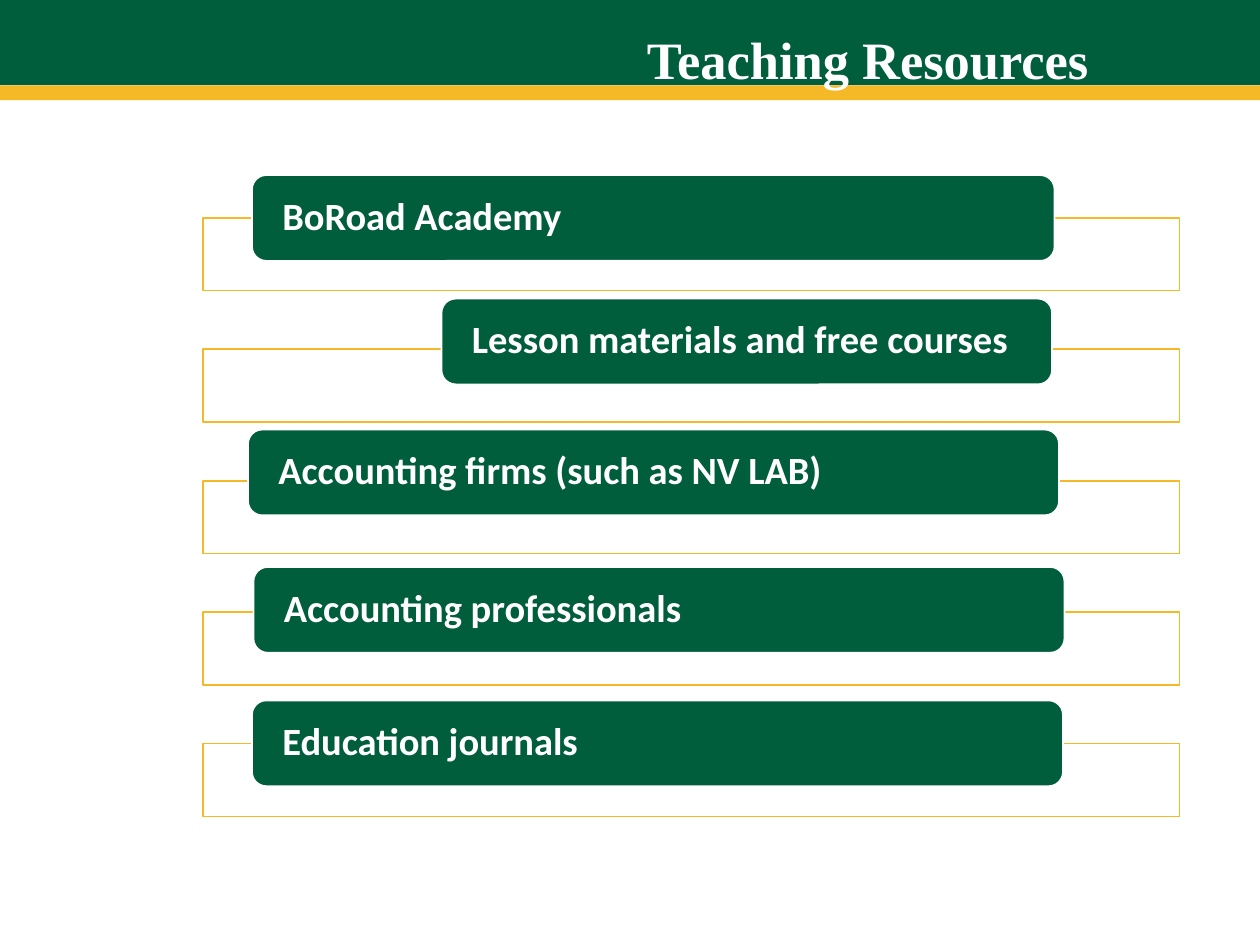
from pptx import Presentation
from pptx.dml.color import RGBColor
from pptx.enum.shapes import MSO_SHAPE
from pptx.enum.text import MSO_ANCHOR, PP_ALIGN
from pptx.util import Cm, Pt

RECT = MSO_SHAPE.RECTANGLE
ROUND = MSO_SHAPE.ROUNDED_RECTANGLE
MIDDLE = MSO_ANCHOR.MIDDLE
LEFT, RIGHT = PP_ALIGN.LEFT, PP_ALIGN.RIGHT

GREEN = RGBColor(0x00, 0x5E, 0x3C)
GOLD = RGBColor(0xF5, 0xB8, 0x27)
WHITE = RGBColor(0xFF, 0xFF, 0xFF)

# Label, left, top and width of each pill, in cm
ITEMS = [
    ("BoRoad Academy", 5.08, 3.53, 16.18),
    ("Lesson materials and free courses", 8.9, 6.02, 12.31),
    ("Accounting firms (such as NV LAB)", 5, 8.66, 16.35),
    ("Accounting professionals", 5.11, 11.43, 16.35),
    ("Education journals", 5.08, 14.12, 16.35),
]
FRAME_TOP, PITCH = 4.39, 2.65

prs = Presentation()
prs.slide_width, prs.slide_height = Cm(25.4), Cm(19.05)
slide = prs.slides.add_slide(prs.slide_layouts[6])


def add_box(kind, left, top, width, height, fill, line=None):
    """Add a filled shape, measured in cm, with a 1 pt outline if line is given."""
    box = slide.shapes.add_shape(kind, Cm(left), Cm(top), Cm(width), Cm(height))
    box.shadow.inherit = False
    box.fill.solid()
    box.fill.fore_color.rgb = fill
    if line is None:
        box.line.fill.background()
    else:
        box.line.color.rgb = line
        box.line.width = Pt(1)
    return box


def add_text(frame, text, name, size, align):
    frame.word_wrap = True
    para = frame.paragraphs[0]
    para.alignment = align
    run = para.add_run()
    run.text = text
    run.font.name = name
    run.font.size = Pt(size)
    run.font.bold = True
    run.font.color.rgb = WHITE
    return para


# Header bands and title
add_box(RECT, 0, 0, 25.4, 1.72, GREEN)
add_box(RECT, 0, 1.72, 25.4, 0.3, GOLD)
title = slide.shapes.add_textbox(Cm(6.1), Cm(0.43), Cm(16.1), Cm(1.54))
add_text(title.text_frame, "Teaching Resources", "Times New Roman", 30, RIGHT)

# Gold frames, each with a green pill over its top edge
for row, (label, left, top, width) in enumerate(ITEMS):
    add_box(RECT, 4.09, FRAME_TOP + row * PITCH, 19.69, 1.47, WHITE, GOLD)
    pill = add_box(ROUND, left, top, width, 1.73, GREEN, WHITE)
    frame = pill.text_frame
    frame.margin_left = frame.margin_right = Cm(0.53)
    frame.margin_top = frame.margin_bottom = 0
    frame.vertical_anchor = MIDDLE
    para = add_text(frame, label, "Calibri", 22, LEFT)
    para.line_spacing = 0.9

prs.save("out.pptx")
